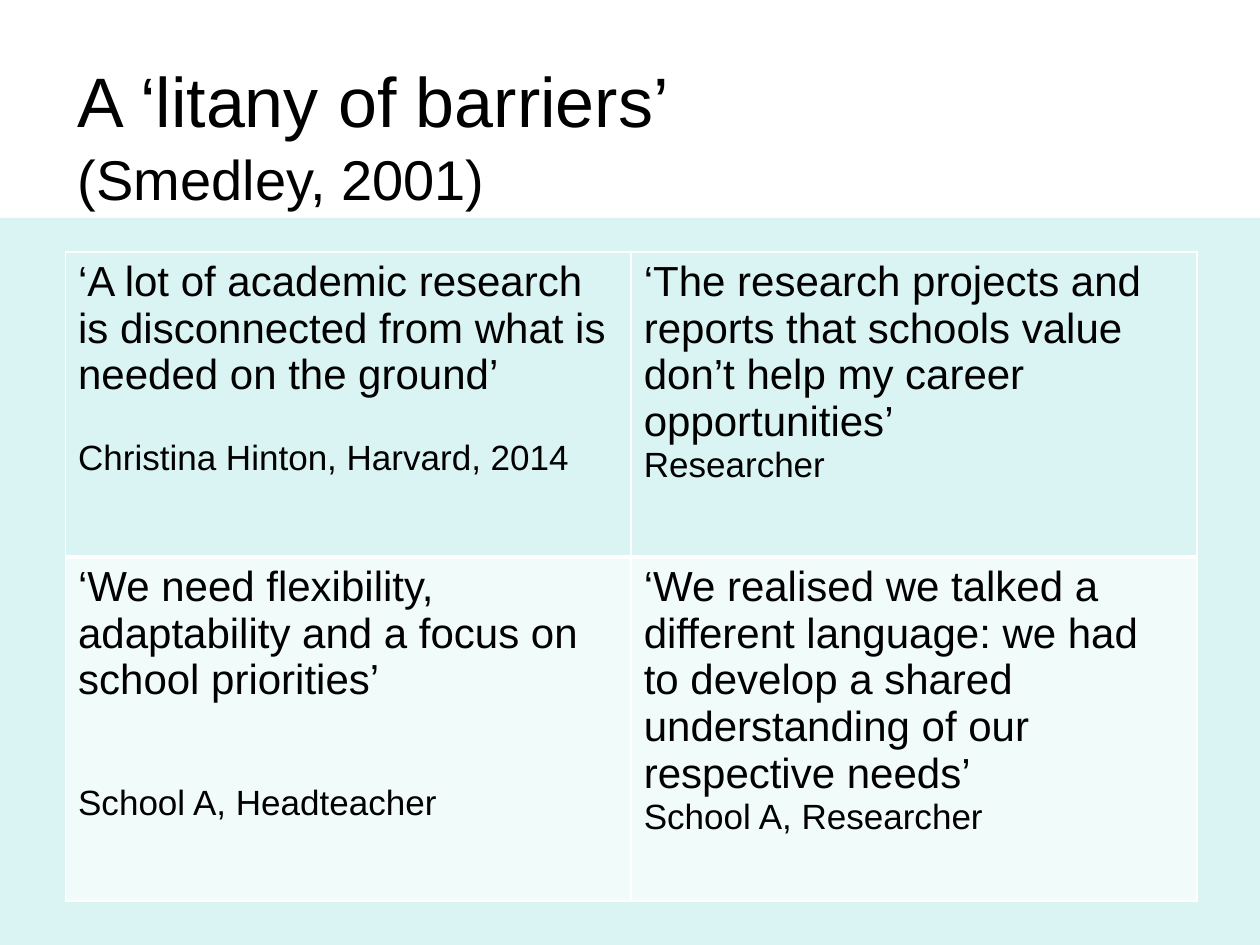
from lxml import etree
from pptx import Presentation
from pptx.dml.color import RGBColor
from pptx.enum.shapes import MSO_SHAPE
from pptx.enum.text import MSO_ANCHOR
from pptx.oxml.ns import qn
from pptx.util import Inches, Pt

RECT = MSO_SHAPE.RECTANGLE
BOTTOM = MSO_ANCHOR.BOTTOM

HUES = {"ink": "000000", "band": "D9F4F3", "pale": "F1FBFA", "rule": "FFFFFF"}
TITLE = [("A ‘litany of barriers’", 40, 0), ("(Smedley, 2001)", 32, 2)]
QUOTES = [
    [
        ("‘A lot of academic research is disconnected from what is needed on the ground’",
         "Christina Hinton, Harvard, 2014", 23),
        ("‘The research projects and reports that schools value don’t help my career opportunities’",
         "Researcher", 0),
    ],
    [
        ("‘We need flexibility, adaptability and a focus on school priorities’",
         "School A, Headteacher", 46),
        ("‘We realised we talked a different language: we had to develop a shared "
         "understanding of our respective needs’",
         "School A, Researcher", 0),
    ],
]
ROWS = [("band", 2.42, 3), ("pale", 2.73, 1)]
WIDE, HIGH = 10, 7.5
LEFT, TOP, SPAN = 0.52, 2, 8.98
SPLIT = 1.73


def tint(name):
    return RGBColor.from_string(HUES[name])


def write(frame, lines):
    for i, (text, size, gap) in enumerate(lines):
        para = frame.paragraphs[0] if i == 0 else frame.add_paragraph()
        if gap:
            para.space_before = Pt(gap)
        run = para.add_run()
        run.text = text
        for key, val in {"name": "Arial", "size": Pt(size)}.items():
            setattr(run.font, key, val)
        run.font.color.rgb = tint("ink")


def edge(cell, sides):
    props = cell._tc.get_or_add_tcPr()
    for i, (side, width) in enumerate(sides.items()):
        line = etree.Element(qn("a:ln" + side), w=str(Pt(width)))
        fill = etree.SubElement(line, qn("a:solidFill"))
        etree.SubElement(fill, qn("a:srgbClr"), val=HUES["rule"])
        props.insert(i, line)


deck = Presentation()
deck.slide_width, deck.slide_height = Inches(WIDE), Inches(HIGH)
slide = deck.slides.add_slide(deck.slide_layouts[6])

panel = slide.shapes.add_shape(
    RECT, 0, Inches(SPLIT), Inches(WIDE), Inches(HIGH - SPLIT))
panel.shadow.inherit = False
panel.fill.solid()
panel.fill.fore_color.rgb = tint("band")
panel.line.fill.background()

head = slide.shapes.add_textbox(
    Inches(LEFT), Inches(0.42), Inches(6.56), Inches(SPLIT - 0.42)).text_frame
for key, val in {"word_wrap": True, "vertical_anchor": BOTTOM}.items():
    setattr(head, key, val)
write(head, TITLE)

cols = len(QUOTES[0])
grid = slide.shapes.add_table(
    len(ROWS), cols, Inches(LEFT), Inches(TOP), Inches(SPAN),
    Inches(sum(row[1] for row in ROWS))).table
for col in grid.columns:
    col.width = Inches(SPAN / cols)
above = 1
for r, (hue, tall, below) in enumerate(ROWS):
    grid.rows[r].height = Inches(tall)
    for c, (quote, source, gap) in enumerate(QUOTES[r]):
        cell = grid.cell(r, c)
        cell.fill.solid()
        cell.fill.fore_color.rgb = tint(hue)
        edge(cell, {"L": 1, "R": 1, "T": above, "B": below})
        write(cell.text_frame, [(quote, 24, 0), (source, 20, gap)])
    above = below

deck.save("out.pptx")
